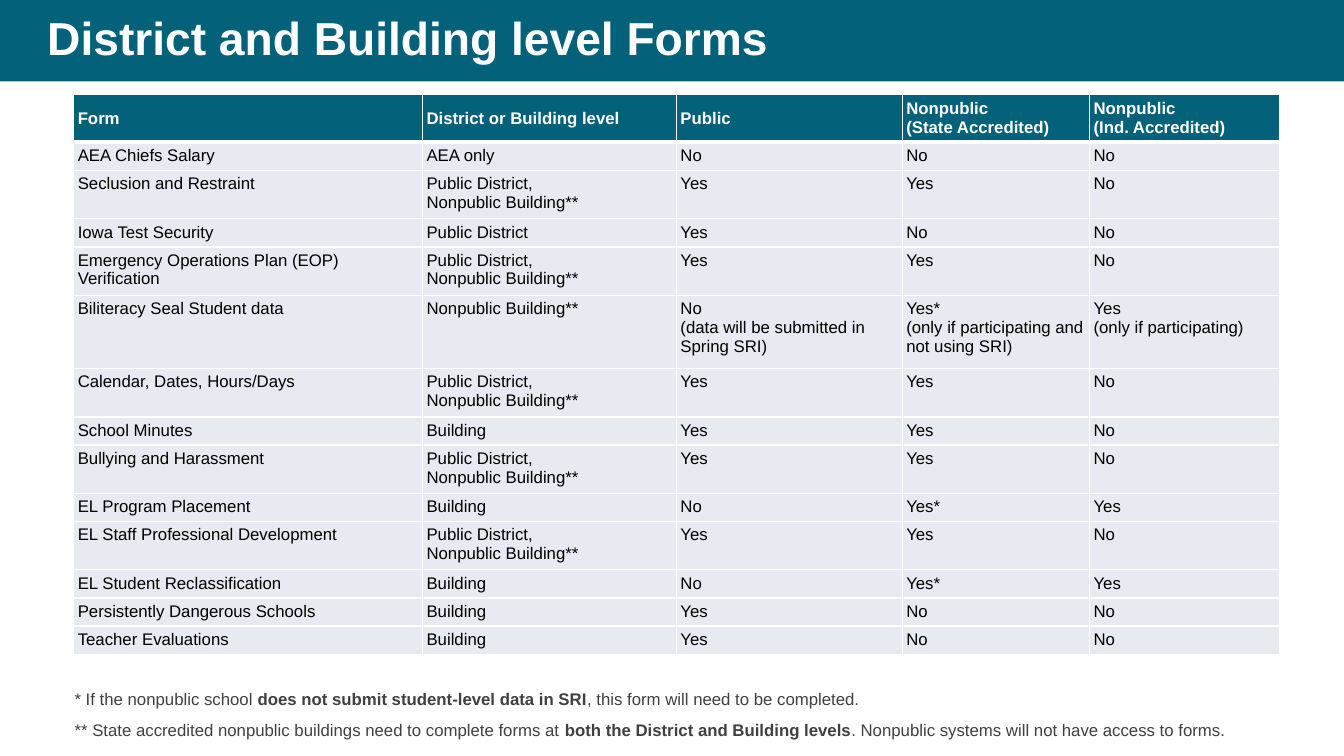
from dataclasses import dataclass

import lxml.etree
import pptx
import pptx.dml.color
import pptx.enum.shapes
import pptx.enum.text
import pptx.oxml.ns
import pptx.util

Cm = pptx.util.Cm
Pt = pptx.util.Pt
MIDDLE = pptx.enum.text.MSO_ANCHOR.MIDDLE
TOP = pptx.enum.text.MSO_ANCHOR.TOP


@dataclass(frozen=True)
class Theme:
    font: str = "Arial"
    teal: str = "03617A"
    white: str = "FFFFFF"
    row_fill: str = "E7EAF0"
    black: str = "000000"
    note_grey: str = "404040"
    title_size: float = 33
    body_size: float = 12


THEME = Theme()

TITLE = "District and Building level Forms"
BOTH_LEVELS = "Public District,\nNonpublic Building**"
HEADER = ("Form", "District or Building level", "Public",
          "Nonpublic\n(State Accredited)", "Nonpublic\n(Ind. Accredited)")
FORMS = [
    ("AEA Chiefs Salary", "AEA only", "No", "No", "No"),
    ("Seclusion and Restraint", BOTH_LEVELS, "Yes", "Yes", "No"),
    ("Iowa Test Security", "Public District", "Yes", "No", "No"),
    ("Emergency Operations Plan (EOP) Verification", BOTH_LEVELS, "Yes", "Yes", "No"),
    ("Biliteracy Seal Student data", "Nonpublic Building**",
     "No\n(data will be submitted in Spring SRI)",
     "Yes*\n(only if participating and not using SRI)",
     "Yes\n(only if participating)"),
    ("Calendar, Dates, Hours/Days", BOTH_LEVELS, "Yes", "Yes", "No"),
    ("School Minutes", "Building", "Yes", "Yes", "No"),
    ("Bullying and Harassment", BOTH_LEVELS, "Yes", "Yes", "No"),
    ("EL Program Placement", "Building", "No", "Yes*", "Yes"),
    ("EL Staff Professional Development", BOTH_LEVELS, "Yes", "Yes", "No"),
    ("EL Student Reclassification", "Building", "No", "Yes*", "Yes"),
    ("Persistently Dangerous Schools", "Building", "Yes", "No", "No"),
    ("Teacher Evaluations", "Building", "Yes", "No", "No"),
]
COLUMN_WIDTHS = (8.79, 6.4, 5.69, 4.72, 4.8)
ONE_LINE, TWO_LINES, TALL = 0.68, 1.15, 1.85

# Each note is a list of (text, bold) runs
NOTES = [
    [("* If the nonpublic school ", False),
     ("does not submit student-level data in SRI", True),
     (", this form will need to be completed.", False)],
    [("** State accredited nonpublic buildings need to complete forms at ", False),
     ("both the District and Building levels", True),
     (". Nonpublic systems will not have access to forms.", False)],
]


def rgb(value):
    return pptx.dml.color.RGBColor.from_string(value)


def add_run(paragraph, text, size, color, bold=False):
    run = paragraph.add_run()
    run.text = text
    run.font.name = THEME.font
    run.font.size = Pt(size)
    run.font.bold = bold
    run.font.color.rgb = rgb(color)


def get_paragraph(text_frame, index):
    return text_frame.paragraphs[0] if index == 0 else text_frame.add_paragraph()


def add_border(cell, side, points):
    properties = cell._tc.get_or_add_tcPr()
    qn = pptx.oxml.ns.qn
    line = lxml.etree.SubElement(properties, qn(f"a:ln{side}"), w=str(Pt(points)))
    fill = lxml.etree.SubElement(line, qn("a:solidFill"))
    lxml.etree.SubElement(fill, qn("a:srgbClr"), val=THEME.white)


def row_height(values):
    """Height in cm that suits the content of a row."""
    if any("(only if" in value for value in values):
        return TALL
    wraps = any("\n" in value or len(value) > 40 for value in values)
    return TWO_LINES if wraps else ONE_LINE


def add_title_band(slide, left, top, width, height):
    # Coloured band
    band = slide.shapes.add_shape(
        pptx.enum.shapes.MSO_SHAPE.RECTANGLE, Cm(left), Cm(top), Cm(width), Cm(height))
    band.shadow.inherit = False
    band.fill.solid()
    band.fill.fore_color.rgb = rgb(THEME.teal)
    band.line.fill.background()
    # Title text
    title = slide.shapes.add_textbox(
        Cm(left + 0.94), Cm(top), Cm(width - 2.57), Cm(height))
    title.text_frame.word_wrap = True
    title.text_frame.vertical_anchor = MIDDLE
    paragraph = title.text_frame.paragraphs[0]
    paragraph.line_spacing = 0.9
    add_run(paragraph, TITLE, THEME.title_size, THEME.white, bold=True)


def fill_cell(cell, text, is_header, after_header):
    cell.margin_left = cell.margin_right = Cm(0.1)
    cell.margin_top = cell.margin_bottom = Cm(0.1)
    cell.vertical_anchor = MIDDLE if is_header else TOP
    for side, points in (("L", 1), ("R", 1), ("T", 3 if after_header else 1),
                         ("B", 3 if is_header else 1)):
        add_border(cell, side, points)
    cell.fill.solid()
    cell.fill.fore_color.rgb = rgb(THEME.teal if is_header else THEME.row_fill)
    color = THEME.white if is_header else THEME.black
    for index, line in enumerate(text.split("\n")):
        paragraph = get_paragraph(cell.text_frame, index)
        add_run(paragraph, line, THEME.body_size, color, bold=is_header)


def add_forms_table(slide, left, top):
    rows = [HEADER] + FORMS
    heights = [row_height(values) for values in rows]
    table = slide.shapes.add_table(
        len(rows), len(HEADER), Cm(left), Cm(top),
        Cm(sum(COLUMN_WIDTHS)), Cm(sum(heights))).table
    table.horz_banding = False
    for column, width in zip(table.columns, COLUMN_WIDTHS):
        column.width = Cm(width)
    for row_index, values in enumerate(rows):
        table.rows[row_index].height = Cm(heights[row_index])
        for column_index, text in enumerate(values):
            fill_cell(table.cell(row_index, column_index), text,
                      row_index == 0, row_index == 1)


def add_notes(slide, left, top, width, height):
    box = slide.shapes.add_textbox(Cm(left), Cm(top), Cm(width), Cm(height))
    box.text_frame.word_wrap = True
    for index, runs in enumerate(NOTES):
        paragraph = get_paragraph(box.text_frame, index)
        if index < len(NOTES) - 1:
            paragraph.space_after = Pt(8)
        for text, bold in runs:
            add_run(paragraph, text, THEME.body_size, THEME.note_grey, bold)


def main():
    presentation = pptx.Presentation()
    presentation.slide_width = Cm(33.87)
    presentation.slide_height = Cm(19.05)
    slide = presentation.slides.add_slide(presentation.slide_layouts[6])
    add_title_band(slide, 0, 0, 33.87, 2.05)
    add_forms_table(slide, 1.86, 2.37)
    add_notes(slide, 1.63, 17.22, 31.75, 1.57)
    presentation.save("out.pptx")


if __name__ == "__main__":
    main()
